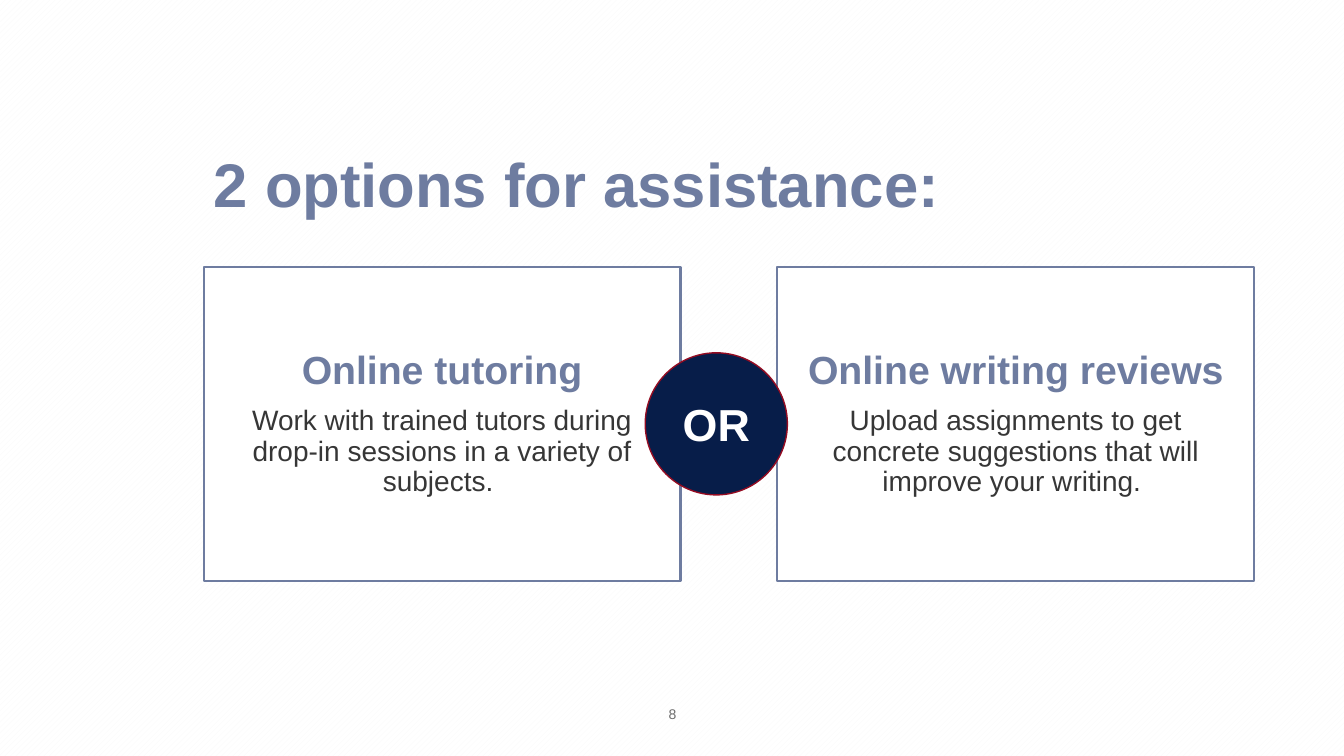
import pptx
import pptx.dml.color
import pptx.enum.dml
import pptx.enum.shapes
import pptx.enum.text
import pptx.oxml.ns
import pptx.util
import lxml.etree

ALIGN = pptx.enum.text.PP_ALIGN
ANCHOR = pptx.enum.text.MSO_ANCHOR
COLORS = {
    "slate": "6E7CA0",
    "navy": "071D49",
    "crimson": "940C22",
    "body": "363636",
    "muted": "6C6C6C",
    "white": "FFFFFF",
    "stripe": "F9F9F9",
}
STYLES = {
    "title": {"size": 44, "bold": True, "color": "slate"},
    "heading": {"size": 28, "bold": True, "color": "slate"},
    "detail": {"size": 20, "bold": False, "color": "body"},
    "badge": {"size": 32, "bold": True, "color": "white"},
    "number": {"size": 10, "bold": False, "color": "muted"},
}
OPTIONS = [
    ("Online tutoring",
     "Work with trained tutors during drop-in sessions in a variety of subjects. "),
    ("Online writing reviews",
     "Upload assignments to get concrete suggestions that will improve your writing. "),
]
CARD_LEFT, CARD_TOP, CARD_WIDTH, CARD_HEIGHT = 15.15, 35.33, 35.48, 41.47
CARD_PITCH = 42.69
BADGE_WIDTH, BADGE_HEIGHT = 10.58, 18.8


def rgb(name):
    return pptx.dml.color.RGBColor.from_string(COLORS[name])


class SlideBuilder:
    font_name = "Arial"

    def __init__(self, deck, layout):
        self.deck = deck
        self.page = deck.slides.add_slide(deck.slide_layouts[layout])

    def area(self, left, top, width, height):
        across, down = self.deck.slide_width / 100, self.deck.slide_height / 100
        shares = (left * across, top * down, width * across, height * down)
        return [pptx.util.Emu(round(length)) for length in shares]

    def place(self, box, area):
        places = dict(zip(("left", "top", "width", "height"), self.area(*area)))
        for name, value in places.items():
            setattr(box, name, value)

    def background(self, front, back):
        fill = self.page.background.fill
        fill.patterned()
        fill.pattern = pptx.enum.dml.MSO_PATTERN.WIDE_UPWARD_DIAGONAL
        fill.fore_color.rgb = rgb(front)
        fill.back_color.rgb = rgb(back)

    def paint(self, box, fill, line, width):
        box.shadow.inherit = False
        box.fill.solid()
        box.fill.fore_color.rgb = rgb(fill)
        box.line.color.rgb = rgb(line)
        box.line.width = pptx.util.Pt(width)

    def add_text(self, box, lines, anchor=ANCHOR.MIDDLE, align=ALIGN.CENTER,
                 spacing=1.0, gap=0, inset=None):
        frame = box.text_frame
        settings = {"word_wrap": True, "vertical_anchor": anchor,
                    "auto_size": pptx.enum.text.MSO_AUTO_SIZE.NONE}
        if inset is not None:
            for side in ("left", "top", "right", "bottom"):
                settings["margin_" + side] = pptx.util.Inches(inset)
        for name, value in settings.items():
            setattr(frame, name, value)
        for index, (text, style) in enumerate(lines):
            para = frame.add_paragraph() if index else frame.paragraphs[0]
            layout = {"alignment": align, "line_spacing": spacing,
                      "space_before": pptx.util.Pt(gap if index else 0)}
            for name, value in layout.items():
                setattr(para, name, value)
            if box.is_placeholder:
                self.remove_bullet(para)
            span = para.add_run()
            span.text = text
            look = STYLES[style]
            font = {"name": self.font_name, "bold": look["bold"],
                    "size": pptx.util.Pt(look["size"])}
            for name, value in font.items():
                setattr(span.font, name, value)
            span.font.color.rgb = rgb(look["color"])

    def remove_bullet(self, para):
        properties = para._p.get_or_add_pPr()
        properties.set("marL", "0")
        properties.set("indent", "0")
        lxml.etree.SubElement(properties, pptx.oxml.ns.qn("a:buNone"))

    def title(self, text, area):
        box = self.page.shapes.title
        self.place(box, area)
        self.add_text(box, [(text, "title")], align=ALIGN.LEFT, spacing=0.9)

    def card(self, slot, heading, detail, area):
        box = self.page.placeholders[slot]
        self.place(box, area)
        self.paint(box, "white", "slate", 1.5)
        self.add_text(box, [(heading, "heading"), (detail, "detail")],
                      spacing=0.9, gap=10, inset=0.3)

    def badge(self, text, area):
        oval = pptx.enum.shapes.MSO_SHAPE.OVAL
        box = self.page.shapes.add_shape(oval, *self.area(*area))
        self.paint(box, "navy", "crimson", 1)
        self.add_text(box, [(text, "badge")])

    def number(self, text, area):
        box = self.page.shapes.add_textbox(*self.area(*area))
        self.add_text(box, [(text, "number")], anchor=ANCHOR.TOP)


def main():
    deck = pptx.Presentation()
    deck.slide_width = pptx.util.Inches(13.33)
    deck.slide_height = pptx.util.Inches(7.5)
    builder = SlideBuilder(deck, 3)
    builder.background("stripe", "white")
    builder.title("2 options for assistance:", (CARD_LEFT, 15.2, 60.84, 19.33))
    for index, (heading, detail) in enumerate(OPTIONS):
        left = CARD_LEFT + index * CARD_PITCH
        builder.card(index + 1, heading, detail,
                     (left, CARD_TOP, CARD_WIDTH, CARD_HEIGHT))
    badge_top = CARD_TOP + (CARD_HEIGHT - BADGE_HEIGHT) / 2
    builder.badge("OR", (48.01, badge_top, BADGE_WIDTH, BADGE_HEIGHT))
    builder.number("8", (38.78, 92.67, 22.5, 5.33))
    deck.save("out.pptx")


if __name__ == "__main__":
    main()
